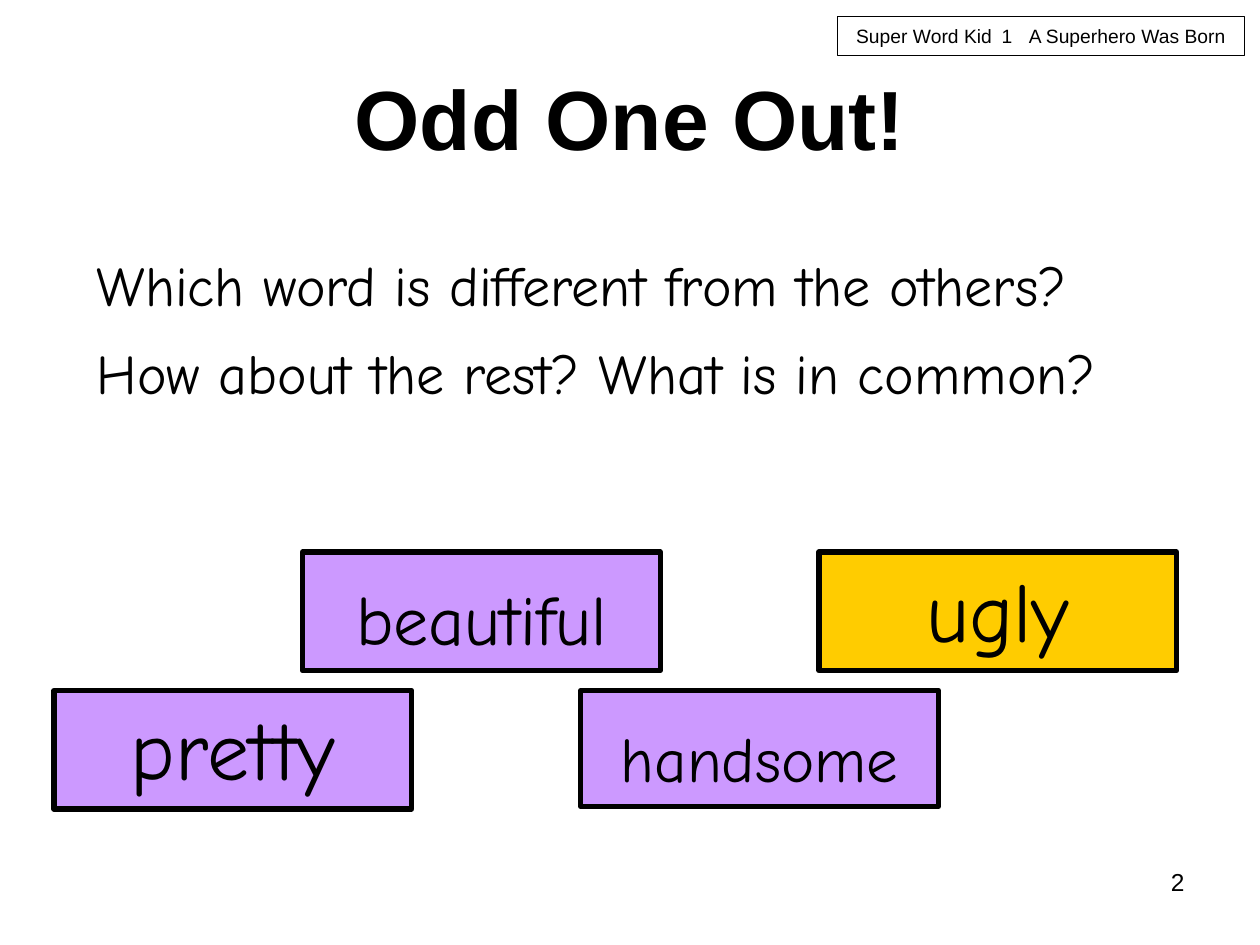
from typing import NamedTuple

from lxml import etree
from pptx import Presentation
from pptx.dml.color import RGBColor
from pptx.enum import shapes, text
from pptx.oxml import ns
from pptx import util as u

BLACK = "000000"
LILAC = "CC99FF"
GOLD = "FFCC00"
HAND = "Comic Neue"
SANS = "Arial"


class Box(NamedTuple):
    left: float
    top: float
    width: float
    height: float


class Style(NamedTuple):
    font: str
    size: float
    align: text.PP_ALIGN = text.PP_ALIGN.LEFT
    bold: bool = False
    spacing: float = 1.0
    anchor: text.MSO_ANCHOR = text.MSO_ANCHOR.TOP


class Label(NamedTuple):
    wording: str
    box: Box
    style: Style


class WordCard(NamedTuple):
    word: str
    left: float
    top: float
    size: float
    spacing: float = 1.0
    fill: str = LILAC
    height: float = 2.39


def rgb(value: str) -> RGBColor:
    return RGBColor.from_string(value)


def write(shape, wording: str, style: Style) -> None:
    frame = shape.text_frame
    frame.text = wording
    frame.word_wrap = True
    frame.vertical_anchor = style.anchor
    paragraph = frame.paragraphs[0]
    paragraph.alignment = style.align
    paragraph.line_spacing = style.spacing
    for run in paragraph.runs:
        run.font.name = style.font
        run.font.size = u.Pt(style.size)
        run.font.bold = style.bold
        run.font.color.rgb = rgb(BLACK)


def add_label(slide, label: Label) -> None:
    write(slide.shapes.add_textbox(*map(u.Cm, label.box)), label.wording, label.style)


def add_frame(slide, box: Box, line_width: float, fill: str = ""):
    frame = slide.shapes.add_shape(shapes.MSO_SHAPE.RECTANGLE, *map(u.Cm, box))
    frame.shadow.inherit = False
    frame.line.color.rgb = rgb(BLACK)
    frame.line.width = u.Pt(line_width)
    if fill:
        frame.fill.solid()
        frame.fill.fore_color.rgb = rgb(fill)
    else:
        frame.fill.background()
    return frame


def add_card(slide, card: WordCard) -> None:
    box = Box(card.left, card.top, CARD_WIDTH, card.height)
    style = Style(HAND, card.size, text.PP_ALIGN.CENTER, spacing=card.spacing)
    write(add_frame(slide, box, 3, card.fill), card.word, style)


def add_tab_stops(paragraph, stops: tuple[float, ...]) -> None:
    properties = paragraph._p.get_or_add_pPr()
    tab_list = etree.SubElement(properties, ns.qn("a:tabLst"))
    for stop in stops:
        etree.SubElement(tab_list, ns.qn("a:tab"), pos=str(u.Cm(stop)), algn="l")


def add_lesson_tag(slide) -> None:
    tag = add_frame(slide, Box(16.89, 0.33, 8.2, 0.79), 0.75)
    write(tag, "Super Word Kid\t1\tA Superhero Was Born", Style(SANS, 11))
    tag.text_frame.margin_left = u.Cm(0.37)
    tag.text_frame.margin_right = u.Cm(0)
    tag.text_frame.margin_top = tag.text_frame.margin_bottom = u.Cm(0.15)
    add_tab_stops(tag.text_frame.paragraphs[0], (2.93, 3.48))


CARD_WIDTH = 7.21
UPPER_ROW, LOWER_ROW = 11.13, 13.92
QUESTION = Style(HAND, 32)

LABELS = [
    Label("2", Box(18.21, 17.35, 5.92, 1.32), Style(SANS, 14, text.PP_ALIGN.RIGHT)),
    Label("Odd One Out!", Box(1.27, 0.76, 22.86, 3.18),
          Style(SANS, 48, text.PP_ALIGN.CENTER, True, anchor=text.MSO_ANCHOR.MIDDLE)),
    Label("Which word is different from the others?",
          Box(1.7, 4.93, 22.6, 1.6), QUESTION),
    Label("How about the rest? What is in common?",
          Box(1.7, 6.7, 22.4, 1.6), QUESTION),
]

CARDS = [
    WordCard("handsome", 11.71, LOWER_ROW, 36, 1.3, height=2.34),
    WordCard("beautiful", 6.1, UPPER_ROW, 40, 1.2),
    WordCard("ugly", 16.51, UPPER_ROW, 48, fill=GOLD),
    WordCard("pretty", 1.09, LOWER_ROW, 48),
]


def main() -> None:
    deck = Presentation()
    deck.slide_width, deck.slide_height = u.Cm(25.4), u.Cm(19.05)
    slide = deck.slides.add_slide(deck.slide_layouts[6])
    add_lesson_tag(slide)
    for label in LABELS:
        add_label(slide, label)
    for card in CARDS:
        add_card(slide, card)
    deck.save("out.pptx")


if __name__ == "__main__":
    main()
